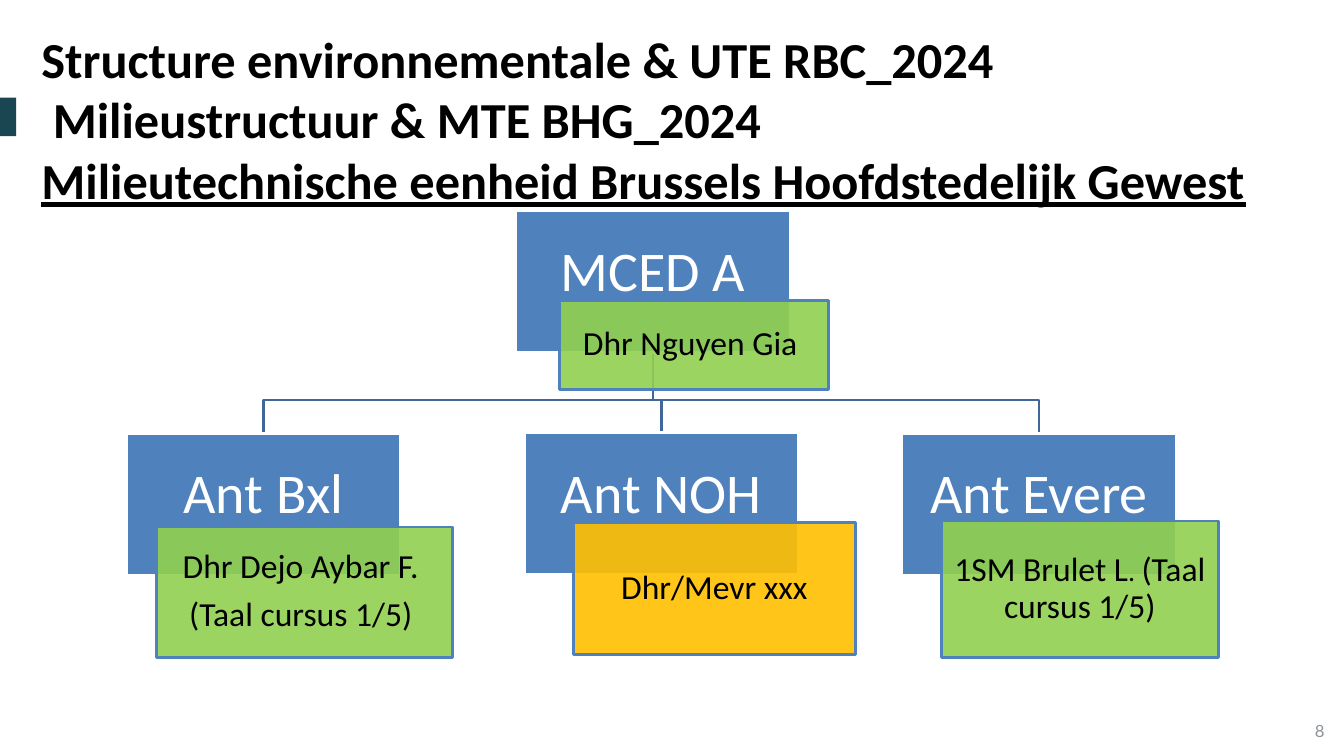
from pptx import Presentation
from pptx.dml.color import RGBColor
from pptx.enum.shapes import MSO_SHAPE
from pptx.enum.text import MSO_ANCHOR, MSO_AUTO_SIZE, PP_ALIGN
from pptx.oxml.ns import qn
from pptx.util import Cm, Pt
from lxml.etree import SubElement

BLACK = RGBColor(0x00, 0x00, 0x00)
WHITE = RGBColor(0xFF, 0xFF, 0xFF)
TEAL = RGBColor(0x1A, 0x46, 0x52)
GREY = RGBColor(0x8C, 0x94, 0x98)
BLUE = RGBColor(0x4F, 0x81, 0xBD)
NAVY = RGBColor(0x3F, 0x67, 0x97)
GREEN = RGBColor(0x92, 0xD0, 0x50)
AMBER = RGBColor(0xFF, 0xC0, 0x00)

UNIT_W, UNIT_H = 6.91, 3.58
BEND_Y = 10.08

# Unit name, its left and top, then the label: lines of (text, size) runs, place, fill
HEAD = ("MCED A", 13, 5.31, [[("Dhr Nguyen Gia ", 24)]],
        (14.1, 7.57, 6.78, 2.24), GREEN)
BRANCHES = [
    ("Ant Bxl", 3.18, 10.92,
     [[("Dhr Dejo Aybar F. ", 24)], [("(Taal cursus 1/5) ", 24)]],
     (3.94, 13.28, 7.47, 3.28), GREEN),
    ("Ant NOH", 13.21, 10.9, [[("Dhr/Mevr xxx", 24)]],
     (14.45, 13.16, 7.11, 3.33), AMBER),
    ("Ant Evere", 22.73, 10.92,
     [[("1SM Brulet L", 24), (". ", 20), ("(Taal cursus 1/5)", 24)]],
     (23.72, 13.13, 6.99, 3.43), GREEN),
]


def add_text(p, text, size=24, color=BLACK, font="Calibri", bold=False, underline=False):
    r = p.add_run()
    r.text = text
    f = r.font
    f.name, f.size, f.bold, f.underline = font, Pt(size), bold, underline
    f.color.rgb = color


class OrgSlide:
    def __init__(self, prs):
        self.s = prs.slides.add_slide(prs.slide_layouts[5])
        self.line_width = Pt(2)

    def title(self, lines, place):
        sp = self.s.shapes.title
        sp.left, sp.top, sp.width, sp.height = (Cm(v) for v in place)
        tf = sp.text_frame
        tf.word_wrap = True
        tf.auto_size = MSO_AUTO_SIZE.NONE
        tf.vertical_anchor = MSO_ANCHOR.TOP
        p = tf.paragraphs[0]
        p.alignment = PP_ALIGN.LEFT
        for i, line in enumerate(lines):
            if i:
                p.add_line_break()
            add_text(p, line, size=36, bold=True, underline=i == len(lines) - 1)

    def number(self, text, place):
        tf = self.s.shapes.add_textbox(*(Cm(v) for v in place)).text_frame
        tf.word_wrap = True
        tf.vertical_anchor = MSO_ANCHOR.MIDDLE
        p = tf.paragraphs[0]
        p.alignment = PP_ALIGN.RIGHT
        add_text(p, text, size=12, color=GREY, font="Lato")

    def box(self, place, fill, line=None, alpha=None):
        sp = self.s.shapes.add_shape(MSO_SHAPE.RECTANGLE, *(Cm(v) for v in place))
        sp.shadow.inherit = False
        sp.fill.solid()
        sp.fill.fore_color.rgb = fill
        if alpha:
            clr = sp.fill._xPr.find(qn("a:solidFill"))[0]
            SubElement(clr, qn("a:alpha")).set("val", str(alpha * 1000))
        if line is None:
            sp.line.fill.background()
        else:
            sp.line.color.rgb = line
            sp.line.width = self.line_width
        return sp

    def fill_text(self, sp, lines, color, insets):
        tf = sp.text_frame
        tf.word_wrap = True
        tf.vertical_anchor = MSO_ANCHOR.MIDDLE
        tf.margin_left, tf.margin_top, tf.margin_right, tf.margin_bottom = (
            Cm(v) for v in insets)
        for i, runs in enumerate(lines):
            p = tf.add_paragraph() if i else tf.paragraphs[0]
            p.alignment = PP_ALIGN.CENTER
            p.line_spacing = 0.9
            if i < len(lines) - 1:
                p.space_after = Pt(8.4)
            for text, size in runs:
                add_text(p, text, size=size, color=color)

    def unit(self, name, left, top, lines, label_place, label_fill):
        sp = self.box((left, top, UNIT_W, UNIT_H), BLUE, WHITE)
        self.fill_text(sp, [[(name, 40)]], WHITE, (0.08, 0.08, 0.08, 0.51))
        label = self.box(label_place, label_fill, BLUE, alpha=90)
        self.fill_text(label, lines, BLACK, (0.18, 0.05, 0.18, 0.05))

    def elbow(self, x1, y1, x2, y2):
        fb = self.s.shapes.build_freeform(Cm(x1), Cm(y1))
        corners = [(x1, BEND_Y), (x2, BEND_Y), (x2, y2)]
        fb.add_line_segments([(Cm(x), Cm(y)) for x, y in corners], close=False)
        sp = fb.convert_to_shape()
        sp.shadow.inherit = False
        sp.fill.background()
        sp.line.color.rgb = NAVY
        sp.line.width = self.line_width


def main():
    prs = Presentation()
    prs.slide_width, prs.slide_height = Cm(33.87), Cm(19.05)
    slide = OrgSlide(prs)

    # Side mark, page number and title
    slide.box((0, 2.46, 0.41, 0.97), TEAL)
    slide.number("8", (26.01, 17.91, 7.62, 1.02))
    slide.title(["Structure environnementale & UTE RBC_2024",
                 " Milieustructuur & MTE BHG_2024",
                 "Milieutechnische eenheid Brussels Hoofdstedelijk Gewest"],
                (0.79, 0.58, 31.37, 4.88))

    # Lines from the head unit to its branches
    _, head_left, head_top, *_ = HEAD
    for _, left, top, *_ in BRANCHES:
        slide.elbow(head_left + UNIT_W / 2, head_top + UNIT_H, left + UNIT_W / 2, top)

    # Units with their name labels
    for unit in [HEAD, *BRANCHES]:
        slide.unit(*unit)

    prs.save("out.pptx")


if __name__ == "__main__":
    main()
